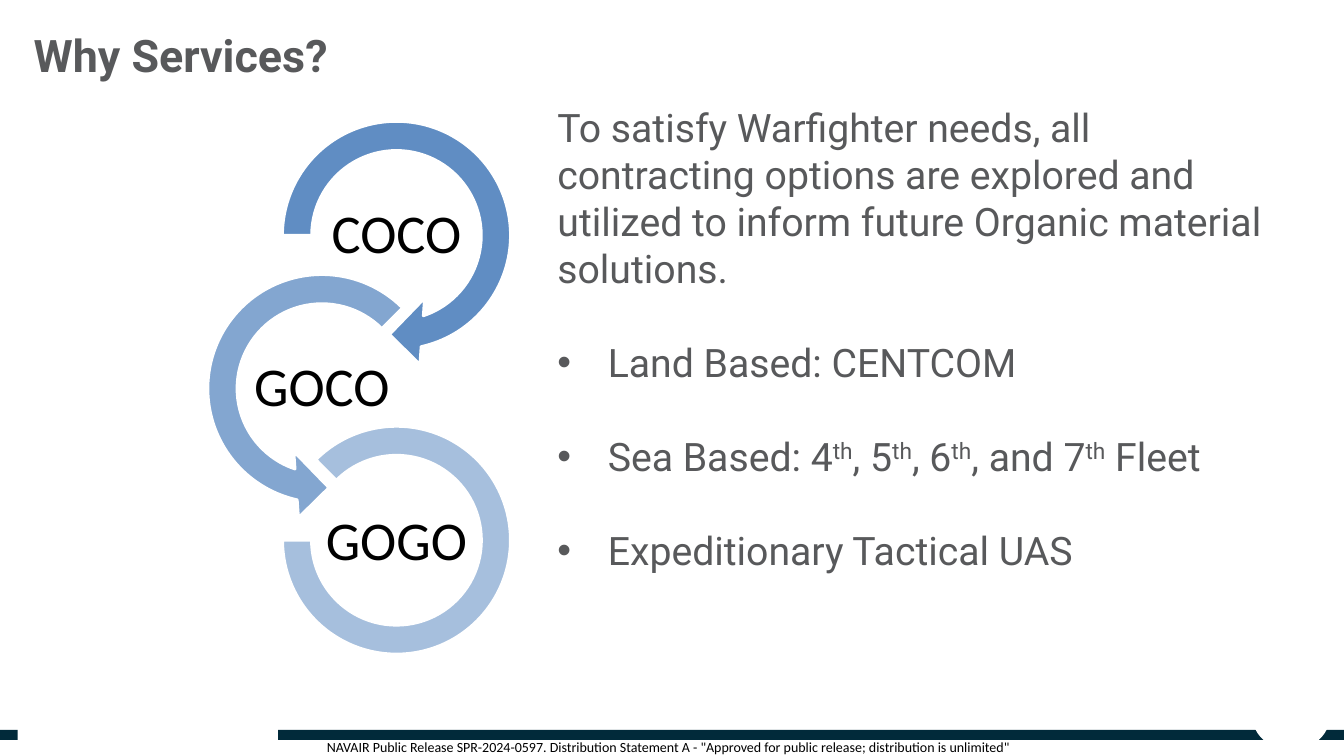
from dataclasses import dataclass

from lxml.etree import SubElement
from pptx import Presentation
from pptx.dml.color import RGBColor
from pptx.enum.shapes import MSO_SHAPE as Shape
from pptx.enum.text import MSO_ANCHOR as Anchor, MSO_AUTO_SIZE as AutoSize, PP_ALIGN as Align
from pptx.oxml.ns import qn
from pptx.util import Emu, Inches, Pt


@dataclass(frozen=True)
class Theme:
    text: str = "58595B"
    black: str = "000000"
    white: str = "FFFFFF"
    bar: str = "012A3A"
    ring: str = "4F81BD"
    font: str = "Roboto"
    label_font: str = "Calibri"
    title_size: int = 32
    body_size: int = 28
    label_size: int = 39
    footer_size: int = 10


@dataclass(frozen=True)
class Box:
    """Columns and rows of a 160 by 90 grid."""
    x: float
    y: float
    w: float
    h: float


@dataclass(frozen=True)
class Ring:
    label: str
    kind: Shape
    cx: float
    cy: float
    size: float
    adjustments: tuple[float, ...]
    opacity: int


THEME = Theme()
COLS, ROWS = 160, 90
LABEL_TOP, LABEL_PITCH, LABEL_W, LABEL_H = 23.64, 18.3, 17.52, 8.76
RIGHT_CX, LEFT_CX = 47.2, 38.32

RINGS = [
    Ring("COCO", Shape.CIRCULAR_ARROW, RIGHT_CX, 28.02, 31.56, (0.11, 11.42, 45, 108, 0.125), 90),
    Ring("GOCO", Shape.LEFT_CIRCULAR_ARROW, LEFT_CX, 46.26, 31.56, (0.11, 11.42, 63, 189, 0.125), 70),
    Ring("GOGO", Shape.BLOCK_ARC, RIGHT_CX, 64.32, 27.12, (135, 108, 0.127), 50),
]
BARS = [Box(0, 86.88, 2.1, 1.2), Box(33.12, 86.88, 126.88, 1.2)]
LOGO_GAP = Box(149.1, 81.36, 9.2, 7.92)

INTRO = ("To satisfy Warfighter needs, all contracting options are explored and "
         "utilized to inform future Organic material solutions.")
# Every second piece between bars is superscript
BULLETS = [
    "Land Based: CENTCOM",
    "Sea Based: 4|th|, 5|th|, 6|th|, and 7|th| Fleet",
    "Expeditionary Tactical UAS",
]
FOOTER = ('NAVAIR Public Release SPR-2024-0597. Distribution Statement A - '
          '"Approved for public release; distribution is unlimited"')

prs = Presentation()
prs.slide_width, prs.slide_height = Inches(13.33), Inches(7.5)


def place(box: Box) -> tuple[Emu, Emu, Emu, Emu]:
    col, row = prs.slide_width / COLS, prs.slide_height / ROWS
    return Emu(int(box.x * col)), Emu(int(box.y * row)), Emu(int(box.w * col)), Emu(int(box.h * row))


def style(font, name: str, size: int, color: str, bold: bool = False) -> None:
    font.name, font.size, font.bold = name, Pt(size), bold
    font.color.rgb = RGBColor.from_string(color)


def add_filled(s, kind: Shape, box: Box, color: str):
    sp = s.shapes.add_shape(kind, *place(box))
    sp.shadow.inherit = False
    sp.fill.solid()
    sp.fill.fore_color.rgb = RGBColor.from_string(color)
    sp.line.fill.background()
    return sp


def set_frame(tf, inset: float, anchor: Anchor, wrap: bool = True) -> None:
    tf.margin_left = tf.margin_right = tf.margin_top = tf.margin_bottom = Inches(inset)
    tf.vertical_anchor, tf.word_wrap, tf.auto_size = anchor, wrap, AutoSize.NONE


def add_caption(s, text: str, box: Box, size: int, inset: float, anchor: Anchor, wrap: bool):
    tf = s.shapes.add_textbox(*place(box)).text_frame
    set_frame(tf, inset, anchor, wrap)
    tf.text = text
    p = tf.paragraphs[0]
    p.alignment = Align.CENTER
    style(p.runs[0].font, THEME.label_font, size, THEME.black)
    return p


def add_ring(s, ring: Ring, index: int) -> None:
    half = ring.size / 2
    sp = add_filled(s, ring.kind, Box(ring.cx - half, ring.cy - half, ring.size, ring.size), THEME.ring)
    for i, value in enumerate(ring.adjustments):
        sp.adjustments[i] = value
    color = sp._element.spPr.find(qn("a:solidFill"))[0]
    SubElement(color, qn("a:alpha")).set("val", str(ring.opacity * 1000))
    sp.line.color.rgb = RGBColor.from_string(THEME.white)
    sp.line.width = Pt(2)
    box = Box(ring.cx - LABEL_W / 2, LABEL_TOP + index * LABEL_PITCH, LABEL_W, LABEL_H)
    p = add_caption(s, ring.label, box, THEME.label_size, 0.03, Anchor.MIDDLE, False)
    p.line_spacing = 0.9


def set_bullet(p, char: str = "") -> None:
    pPr = p._p.get_or_add_pPr()
    indent = Inches(0.5) if char else 0
    pPr.set("marL", str(indent))
    pPr.set("indent", str(-indent))
    if char:
        SubElement(pPr, qn("a:buFont")).set("typeface", "Arial")
        SubElement(pPr, qn("a:buChar")).set("char", char)
    else:
        SubElement(pPr, qn("a:buNone"))


def fill_body(tf) -> None:
    set_frame(tf, 0, Anchor.TOP)
    for i, text in enumerate([INTRO, *BULLETS]):
        p = tf.add_paragraph() if i else tf.paragraphs[0]
        set_bullet(p, "•" if i else "")
        p.space_before = Pt(33.5 if i else 0)
        for j, piece in enumerate(text.split("|")):
            r = p.add_run()
            r.text = piece
            style(r.font, THEME.font, THEME.body_size, THEME.text)
            if j % 2:
                r._r.get_or_add_rPr().set("baseline", "30000")


def main() -> None:
    s = prs.slides.add_slide(prs.slide_layouts[1])

    # Title and body
    title, body = s.shapes.title, s.placeholders[1]
    title.left, title.top, title.width, title.height = place(Box(4, 3.24, 148, 6.48))
    set_frame(title.text_frame, 0, Anchor.TOP)
    title.text_frame.text = "Why Services?"
    p = title.text_frame.paragraphs[0]
    p.alignment = Align.LEFT
    style(p.runs[0].font, THEME.font, THEME.title_size, THEME.text, bold=True)
    body.left, body.top, body.width, body.height = place(Box(66.36, 12.24, 85.7, 56.5))
    fill_body(body.text_frame)

    # Footer band
    for bar in BARS:
        add_filled(s, Shape.RECTANGLE, bar, THEME.bar)
    add_filled(s, Shape.OVAL, LOGO_GAP, THEME.white)
    add_caption(s, FOOTER, Box(-0.96, 87.36, 160.96, 3.24), THEME.footer_size, 0.05, Anchor.TOP, True)

    # Chain of contracting options
    for i, ring in enumerate(RINGS):
        add_ring(s, ring, i)

    prs.save("out.pptx")


if __name__ == "__main__":
    main()
